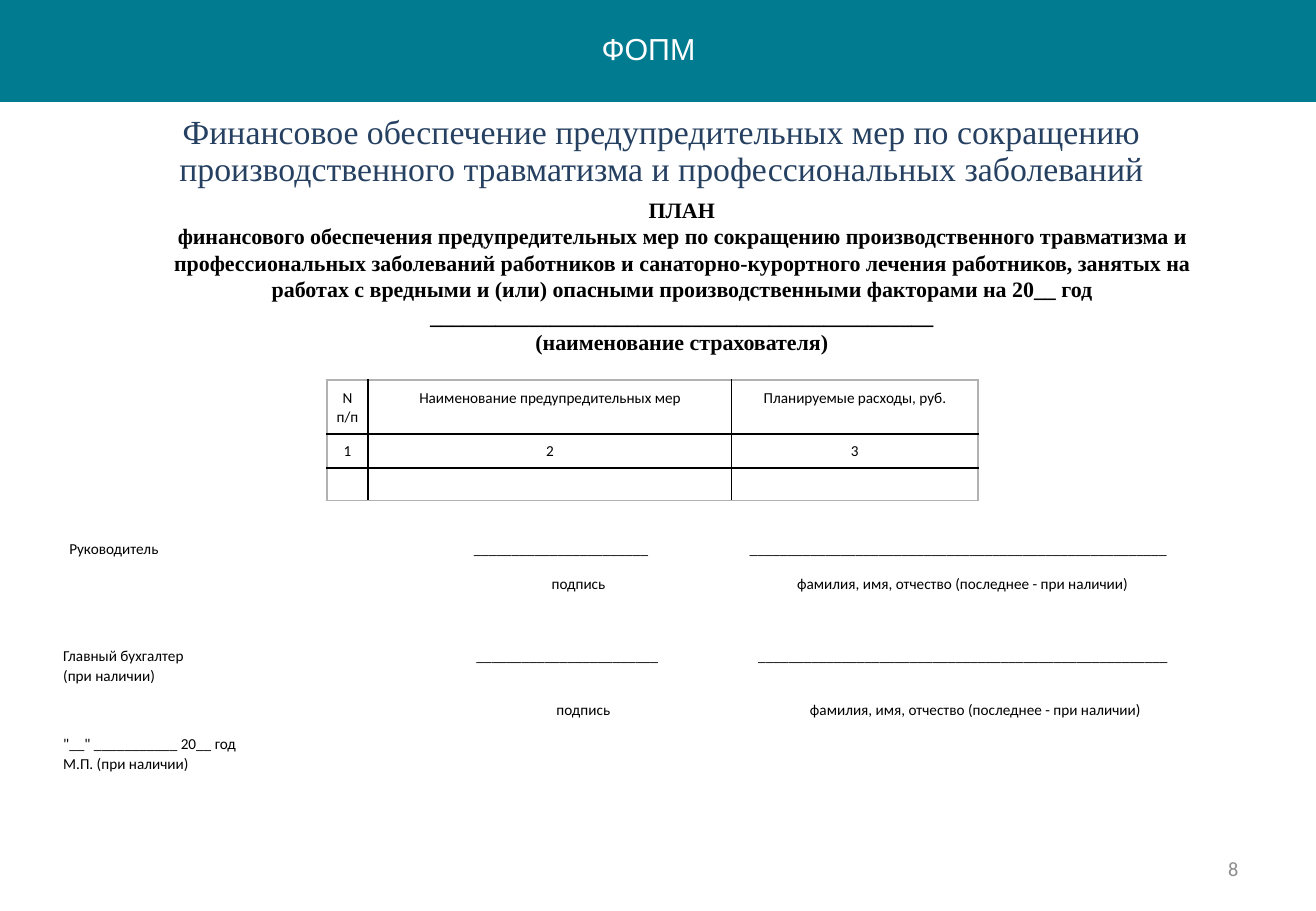
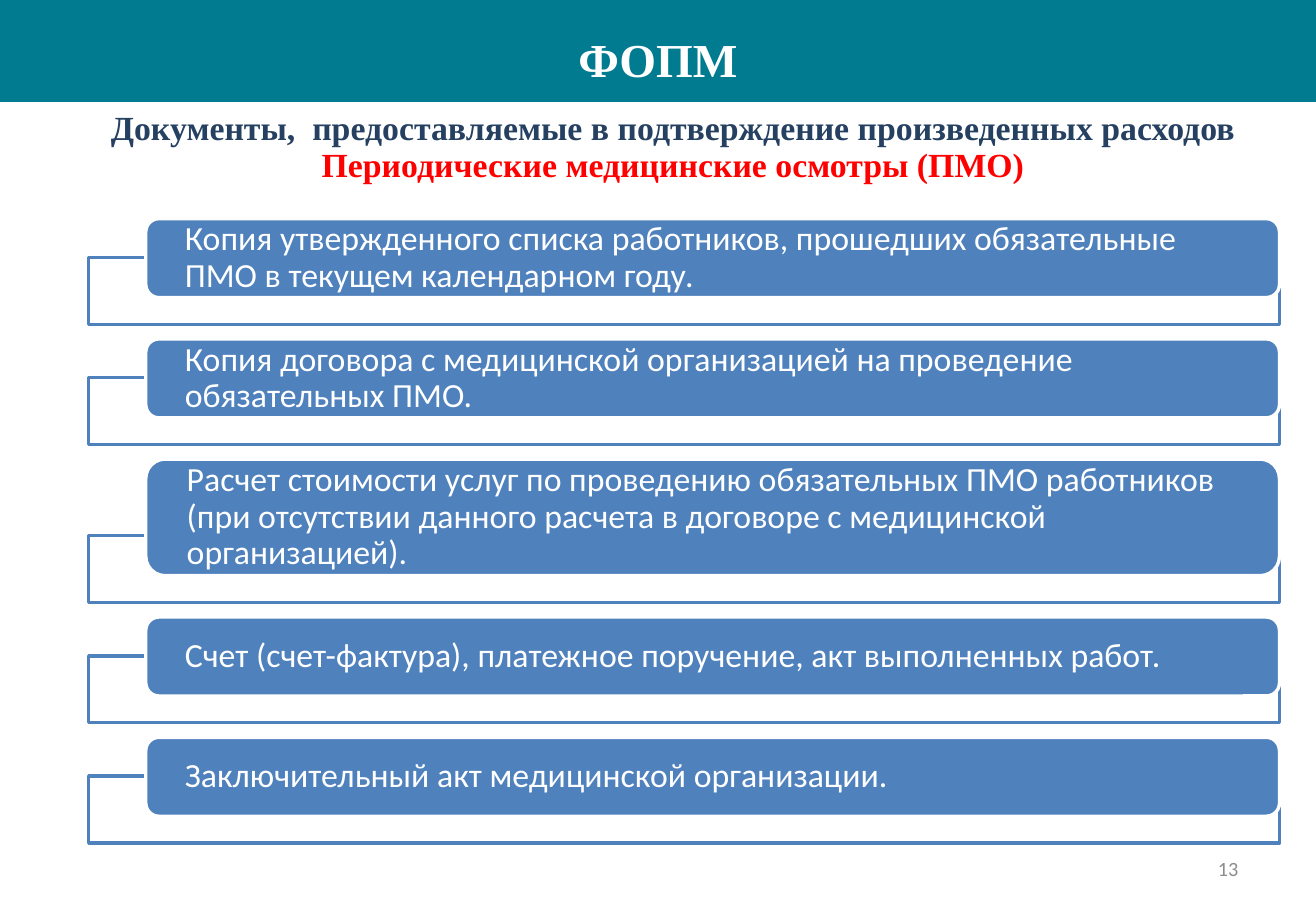
import dataclasses
from typing import Optional

import lxml.etree
import pptx
import pptx.dml.color
import pptx.enum.shapes
import pptx.enum.text
import pptx.oxml.ns
import pptx.util

PX = 9144  # EMU; 100 px to the inch
WIDTH, HEIGHT = 1083, 750
TEAL, NAVY, BLUE, RED = "007B8F", "254061", "4F81BD", "FF0000"
BLACK, WHITE, GREY, EDGE_GREY = "000000", "FFFFFF", "8C8C8C", "B2B2B2"
SERIF = "Times New Roman"

ALIGN = pptx.enum.text.PP_ALIGN
ANCHOR = pptx.enum.text.MSO_ANCHOR
SHAPE = pptx.enum.shapes.MSO_SHAPE


@dataclasses.dataclass(frozen=True)
class Style:
    font: str
    size: float
    color: str = BLACK
    bold: bool = False
    align: ALIGN = ALIGN.LEFT
    spacing: float = 1.0


@dataclasses.dataclass(frozen=True)
class Box:
    x: int
    y: int
    w: int
    h: int

    def emu(self) -> tuple[int, int, int, int]:
        return px(self.x), px(self.y), px(self.w), px(self.h)


@dataclasses.dataclass(frozen=True)
class Cell:
    text: str = ""
    centered: bool = False
    anchor: ANCHOR = ANCHOR.TOP


@dataclasses.dataclass(frozen=True)
class Grid:
    x: int
    y: int
    cols: list[int]
    rows: list[int]
    cells: list[list[Cell]]
    ruled: bool = False


@dataclasses.dataclass(frozen=True)
class Document:
    text: str
    height: int = 65


SUBTITLE = Style(SERIF, 20, NAVY, align=ALIGN.CENTER, spacing=0.9)
PLAN = Style(SERIF, 13, bold=True, align=ALIGN.CENTER)
NUMBER = Style("Calibri", 12, GREY, align=ALIGN.RIGHT)
FORM = Style("Calibri", 9, spacing=1.07)
DOCUMENT = Style("Calibri", 20, WHITE, spacing=0.9)

SIGNATURE = Cell("подпись", True)
FULL_NAME = Cell("фамилия, имя, отчество (последнее - при наличии)", True)
EMPTY = Cell()

PLAN_TEXT = [
    "ПЛАН",
    "финансового обеспечения предупредительных мер по сокращению производственного "
    "травматизма и профессиональных заболеваний работников и санаторно-курортного "
    "лечения работников, занятых на работах с вредными и (или) опасными "
    "производственными факторами на 20__ год",
    "_" * 46,
    "(наименование страхователя)",
]

MEASURES = Grid(269, 313, [34, 299, 203], [44, 27, 27], [
    [Cell("N п/п", True), Cell("Наименование предупредительных мер", True),
     Cell("Планируемые расходы, руб.", True)],
    [Cell("1", True), Cell("2", True), Cell("3", True)],
    [EMPTY] * 3,
], ruled=True)

DIRECTOR = Grid(54, 438, [333, 178, 49, 356], [28, 28], [
    [Cell("Руководитель", anchor=ANCHOR.BOTTOM), Cell("_" * 23), EMPTY, Cell("_" * 55)],
    [EMPTY, SIGNATURE, EMPTY, FULL_NAME],
])

ACCOUNTANT = Grid(49, 526, [340, 182, 50, 363], [44, 28, 44], [
    [Cell("Главный бухгалтер\n(при наличии)", anchor=ANCHOR.BOTTOM), Cell("_" * 24),
     EMPTY, Cell("_" * 54)],
    [EMPTY, SIGNATURE, EMPTY, FULL_NAME],
    [Cell('"__" ___________ 20__ год\nМ.П. (при наличии)'), EMPTY, EMPTY, EMPTY],
])

DOCUMENTS = [
    Document("Копия утвержденного списка работников, прошедших обязательные ПМО "
             "в текущем календарном году."),
    Document("Копия договора с медицинской организацией на проведение обязательных ПМО."),
    Document("Расчет стоимости услуг по проведению обязательных ПМО работников "
             "(при отсутствии данного расчета в договоре с медицинской организацией).", 96),
    Document("Счет (счет-фактура), платежное поручение, акт выполненных работ."),
    Document("Заключительный акт медицинской организации."),
]


def px(n: int) -> int:
    return pptx.util.Emu(n * PX)


def rgb(color: str) -> pptx.dml.color.RGBColor:
    return pptx.dml.color.RGBColor.from_string(color)


def write(tf, lines: list[str], style: Style) -> None:
    """Fill a text frame, one paragraph per line."""
    tf.word_wrap = True
    tf.text = "\n".join(lines)
    for p in tf.paragraphs:
        p.alignment, p.line_spacing = style.align, style.spacing
        p.font.name, p.font.size = style.font, pptx.util.Pt(style.size)
        p.font.bold = style.bold
        p.font.color.rgb = rgb(style.color)


def add_text(s, box: Box, lines: list[str], style: Style):
    tf = s.shapes.add_textbox(*box.emu()).text_frame
    write(tf, lines, style)
    return tf


def add_shape(s, kind: SHAPE, box: Box, fill: str, line: Optional[str] = None):
    sp = s.shapes.add_shape(kind, *box.emu())
    sp.shadow.inherit = False
    sp.fill.solid()
    sp.fill.fore_color.rgb = rgb(fill)
    if line:
        sp.line.color.rgb = rgb(line)
        sp.line.width = pptx.util.Pt(2)
    else:
        sp.line.fill.background()
    return sp


def add_slide(prs, number: int, title_box: Box, title_style: Style):
    """Add a slide with the teal band, its title and the slide number."""
    s = prs.slides.add_slide(prs.slide_layouts[5])
    title = s.shapes.title
    band = add_shape(s, SHAPE.RECTANGLE, Box(0, -3, WIDTH, 87), TEAL)
    title.element.addprevious(band.element)
    title.left, title.top, title.width, title.height = title_box.emu()
    tf = title.text_frame
    tf.auto_size = pptx.enum.text.MSO_AUTO_SIZE.NONE
    tf.vertical_anchor = ANCHOR.TOP
    write(tf, ["ФОПМ"], title_style)
    add_text(s, Box(776, 695, 253, 40), [str(number)], NUMBER).vertical_anchor = ANCHOR.MIDDLE
    return s


def add_subtitle(s, box: Box, lines: list[str], style: Style):
    tf = add_text(s, box, lines, style)
    tf.margin_left, tf.margin_right = px(67), px(8)
    tf.margin_top = tf.margin_bottom = px(4)
    return tf


def add_border(cell, side: str, color: str) -> None:
    qn = pptx.oxml.ns.qn
    ln = lxml.etree.SubElement(cell._tc.get_or_add_tcPr(), qn(f"a:ln{side}"), w="12700")
    fill = lxml.etree.SubElement(ln, qn("a:solidFill"))
    lxml.etree.SubElement(fill, qn("a:srgbClr"), val=color)


def add_grid(s, grid: Grid):
    box = Box(grid.x, grid.y, sum(grid.cols), sum(grid.rows))
    n_rows, n_cols = len(grid.rows), len(grid.cols)
    table = s.shapes.add_table(n_rows, n_cols, *box.emu()).table
    table.first_row = table.horz_banding = False
    for col, width in zip(table.columns, grid.cols):
        col.width = px(width)
    for i, (row, height) in enumerate(zip(table.rows, grid.rows)):
        row.height = px(height)
        for j, content in enumerate(grid.cells[i]):
            cell = table.cell(i, j)
            cell.margin_left = cell.margin_right = px(3)
            cell.margin_top = cell.margin_bottom = px(6)
            cell.vertical_anchor = content.anchor
            align = ALIGN.CENTER if content.centered else ALIGN.LEFT
            write(cell.text_frame, content.text.split("\n"),
                  dataclasses.replace(FORM, align=align))
            if grid.ruled:
                outer = {"L": j == 0, "R": j == n_cols - 1, "T": i == 0, "B": i == n_rows - 1}
                for side, is_outer in outer.items():
                    add_border(cell, side, EDGE_GREY if is_outer else BLACK)
            cell.fill.background()
    return table


def add_document(s, y: int, doc: Document) -> int:
    """Draw a frame with its label and return the top of the next label."""
    frame = Box(73, y + doc.height - 33, 980, 55)
    add_shape(s, SHAPE.RECTANGLE, frame, WHITE, BLUE)
    label = add_shape(s, SHAPE.ROUNDED_RECTANGLE, Box(120, y, 933, doc.height), BLUE, WHITE)
    tf = label.text_frame
    write(tf, [doc.text], DOCUMENT)
    tf.vertical_anchor = ANCHOR.MIDDLE
    tf.margin_left = tf.margin_right = px(29)
    tf.margin_top = tf.margin_bottom = 0
    return frame.y + frame.h + 12


def build_plan_slide(prs) -> None:
    s = add_slide(prs, 8, Box(485, 20, 480, 40), Style("Arial", 18, WHITE))
    add_subtitle(s, Box(22, 91, 986, 69), [
        "Финансовое обеспечение предупредительных мер по сокращению "
        "производственного травматизма и профессиональных заболеваний"], SUBTITLE)
    add_text(s, Box(114, 157, 894, 141), PLAN_TEXT, PLAN)
    add_grid(s, MEASURES)
    add_grid(s, DIRECTOR)
    table = add_grid(s, ACCOUNTANT)
    table.cell(2, 0).merge(table.cell(2, 3))


def build_documents_slide(prs) -> None:
    s = add_slide(prs, 13, Box(466, 20, 556, 57), Style(SERIF, 28, WHITE, bold=True))
    tf = add_subtitle(s, Box(20, 88, 1009, 69), [
        "Документы,  предоставляемые в подтверждение произведенных расходов",
        "Периодические медицинские осмотры (ПМО)",
    ], dataclasses.replace(SUBTITLE, bold=True))
    tf.paragraphs[1].font.color.rgb = rgb(RED)
    y = 180
    for doc in DOCUMENTS:
        y = add_document(s, y, doc)


def main() -> None:
    prs = pptx.Presentation()
    prs.slide_width, prs.slide_height = px(WIDTH), px(HEIGHT)
    build_plan_slide(prs)
    build_documents_slide(prs)
    prs.save("out.pptx")


if __name__ == "__main__":
    main()
